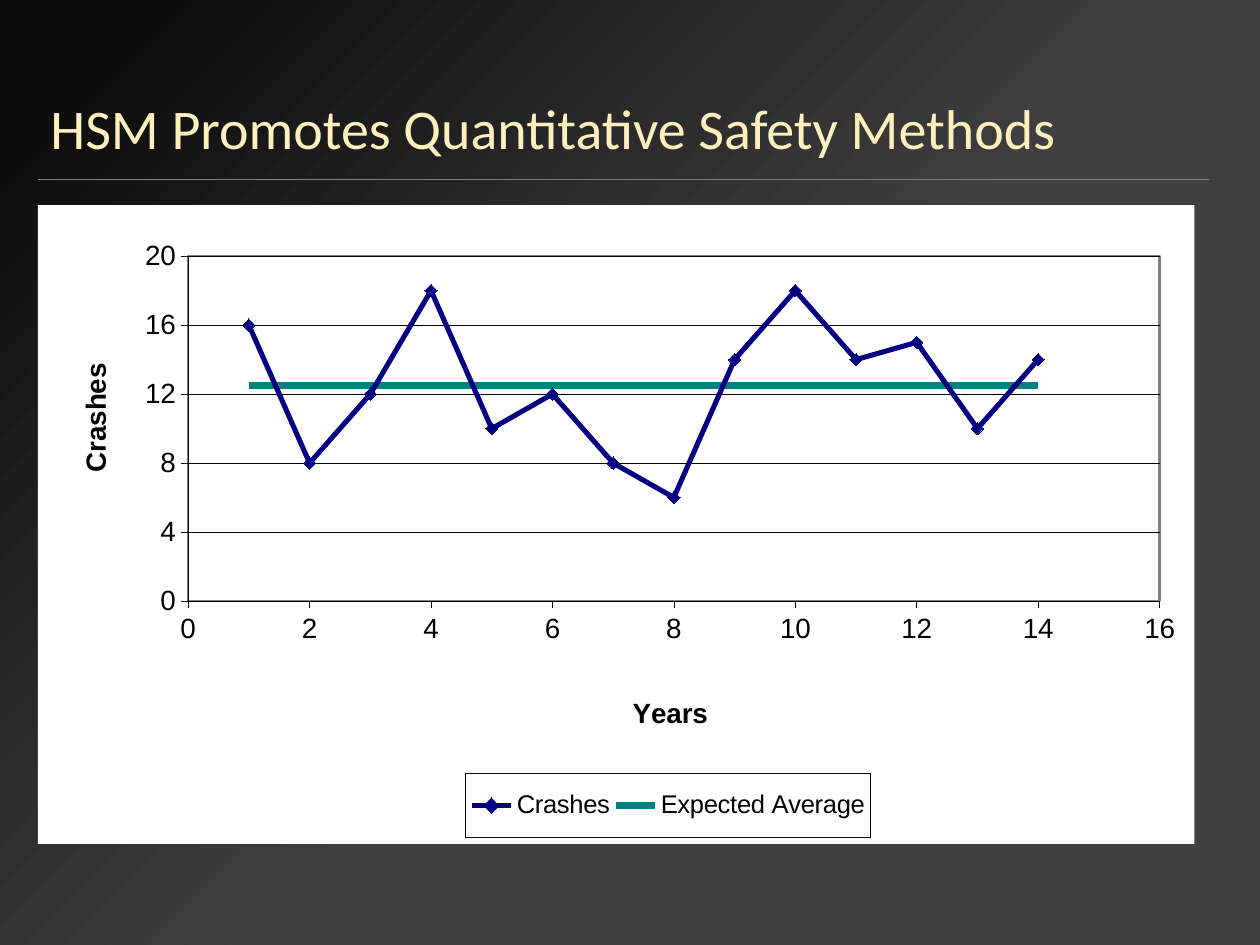
from lxml.etree import SubElement
from pptx import Presentation
from pptx.chart.data import XyChartData
from pptx.dml.color import RGBColor
from pptx.enum.chart import XL_CHART_TYPE as ChartType
from pptx.enum.chart import XL_LEGEND_POSITION as LegendPosition
from pptx.enum.chart import XL_MARKER_STYLE as MarkerStyle
from pptx.enum.chart import XL_TICK_MARK as TickMark
from pptx.enum.shapes import MSO_CONNECTOR as Connector
from pptx.enum.text import MSO_ANCHOR as Anchor
from pptx.enum.text import PP_ALIGN as Align
from pptx.oxml import parse_xml
from pptx.oxml.ns import nsdecls, qn
from pptx.util import Inches, Pt

COLORS = {
    "dark": "0D0D0D", "charcoal": "404040", "title": "FFF0BD", "rule": "808080",
    "paper": "FFFFFF", "ink": "000000", "crashes": "000080", "average": "008080",
}
WIDTH, HEIGHT = Inches(10), Inches(7.5)
MARGIN = 0.03  # share of the slide's width
CRASHES = [16, 8, 12, 18, 10, 12, 8, 6, 14, 18, 14, 15, 10, 14]
EXPECTED_AVERAGE = 12.5


def rgb(name):
    return RGBColor.from_string(COLORS[name])


def share_box(left, top, width, height):
    """Turn shares of the slide's size into lengths."""
    return (round(left * WIDTH), round(top * HEIGHT),
            round(width * WIDTH), round(height * HEIGHT))


def style_line(line, color, width):
    line.color.rgb = rgb(color)
    line.width = Pt(width)


def style_font(font, size, color="ink", name="Arial", bold=False):
    font.name, font.size, font.bold = name, Pt(size), bold
    font.color.rgb = rgb(color)


def fill_background(slide):
    fill = slide.background.fill
    fill.gradient()
    fill.gradient_angle = 315
    for stop, position, color in zip(fill.gradient_stops, (0.07, 0.55), ("dark", "charcoal")):
        stop.position = position
        stop.color.rgb = rgb(color)


def place_title(slide, box, text):
    """Fill the title placeholder and rule a line along its lower edge."""
    left, top, width, height = box
    title = slide.shapes.title
    title.left, title.top, title.width, title.height = box
    frame = title.text_frame
    frame.text = text
    frame.vertical_anchor = Anchor.MIDDLE
    paragraph = frame.paragraphs[0]
    paragraph.alignment = Align.LEFT
    style_font(paragraph.font, 32, "title", "Calibri")

    bottom = top + height
    rule = slide.shapes.add_connector(
        Connector.STRAIGHT, left, bottom, round(left + width * 1.01), bottom)
    style_line(rule.line, "rule", 0.75)
    SubElement(rule._element.spPr, qn("a:effectLst"))


def set_layout(parent, after, x, y, size=None, inner=False):
    """Pin a chart part at shares of the chart, behind its child named after."""
    for old in parent.findall(qn("c:layout")):
        parent.remove(old)
    parts = ['<c:layoutTarget val="inner"/>'] if inner else []
    parts += ['<c:xMode val="edge"/><c:yMode val="edge"/>',
              f'<c:x val="{x}"/><c:y val="{y}"/>']
    if size:
        parts.append('<c:w val="{}"/><c:h val="{}"/>'.format(*size))
    layout = parse_xml(f'<c:layout {nsdecls("c")}><c:manualLayout>{"".join(parts)}'
                       '</c:manualLayout></c:layout>')
    if after:
        parent.find(qn(after)).addnext(layout)
    else:
        parent.insert(0, layout)


def set_frame(parent, line=None, width=0.36):
    """Give a chart part a white fill and an outline, ahead of its text settings."""
    outline = (f'<a:solidFill><a:srgbClr val="{COLORS[line]}"/></a:solidFill>'
               if line else "<a:noFill/>")
    properties = parse_xml(
        f'<c:spPr {nsdecls("c", "a")}><a:solidFill><a:srgbClr val="{COLORS["paper"]}"/>'
        f'</a:solidFill><a:ln w="{Pt(width)}">{outline}</a:ln></c:spPr>')
    text = parent.find(qn("c:txPr"))
    if text is None:
        parent.append(properties)
    else:
        text.addprevious(properties)


def style_axis(axis, title, maximum, step, title_at):
    axis.minimum_scale, axis.maximum_scale, axis.major_unit = 0, maximum, step
    axis.major_tick_mark, axis.minor_tick_mark = TickMark.OUTSIDE, TickMark.NONE
    style_line(axis.format.line, "ink", 0.36)
    style_font(axis.tick_labels.font, 15.9)
    frame = axis.axis_title.text_frame
    frame.text = title
    style_font(frame.paragraphs[0].font, 15.9, bold=True)
    set_layout(axis.axis_title._element, "c:tx", *title_at)


def style_series(series, color, width, marked):
    style_line(series.format.line, color, width)
    marker = series.marker
    if not marked:
        marker.style = MarkerStyle.NONE
        return
    marker.style, marker.size = MarkerStyle.DIAMOND, 7
    marker.format.fill.solid()
    marker.format.fill.fore_color.rgb = rgb(color)
    marker.format.line.color.rgb = rgb(color)


def add_crash_chart(slide, box):
    data = XyChartData()
    averages = [EXPECTED_AVERAGE] * len(CRASHES)
    for name, values in (("Crashes", CRASHES), ("Expected Average", averages)):
        series = data.add_series(name)
        for year, value in enumerate(values, start=1):
            series.add_data_point(year, value)
    chart = slide.shapes.add_chart(ChartType.XY_SCATTER_LINES, *box, data).chart
    chart.has_title = False
    style_font(chart.font, 15.9)
    set_frame(chart._chartSpace)

    plot = chart.plots[0]
    plot.vary_by_categories = False
    crashes, average = plot.series
    style_series(crashes, "crashes", 2.89, marked=True)
    style_series(average, "average", 4.33, marked=False)

    style_axis(chart.category_axis, "Years", 16, 2, (0.51, 0.76))
    style_axis(chart.value_axis, "Crashes", 20, 4, (0.03, 0.24))
    chart.category_axis.has_major_gridlines = False
    chart.value_axis.has_major_gridlines = True
    style_line(chart.value_axis.major_gridlines.format.line, "ink", 0.36)

    plot_area = chart._chartSpace.chart.plotArea
    set_layout(plot_area, None, 0.13, 0.08, (0.84, 0.54), inner=True)
    set_frame(plot_area, "rule", 1.45)

    chart.has_legend = True
    legend = chart.legend
    legend.position = LegendPosition.BOTTOM
    legend.include_in_layout = False
    style_font(legend.font, 14.6)
    set_layout(legend._element, "c:legendPos", 0.37, 0.89, (0.35, 0.1))
    set_frame(legend._element, "ink")


def main():
    presentation = Presentation()
    presentation.slide_width, presentation.slide_height = WIDTH, HEIGHT
    slide = presentation.slides.add_slide(presentation.slide_layouts[5])
    fill_background(slide)
    place_title(slide, share_box(MARGIN, 0.08, 0.92, 0.11),
                "HSM Promotes Quantitative Safety Methods")
    add_crash_chart(slide, share_box(MARGIN, 0.217, 0.918, 0.676))
    presentation.save("out.pptx")


if __name__ == "__main__":
    main()
